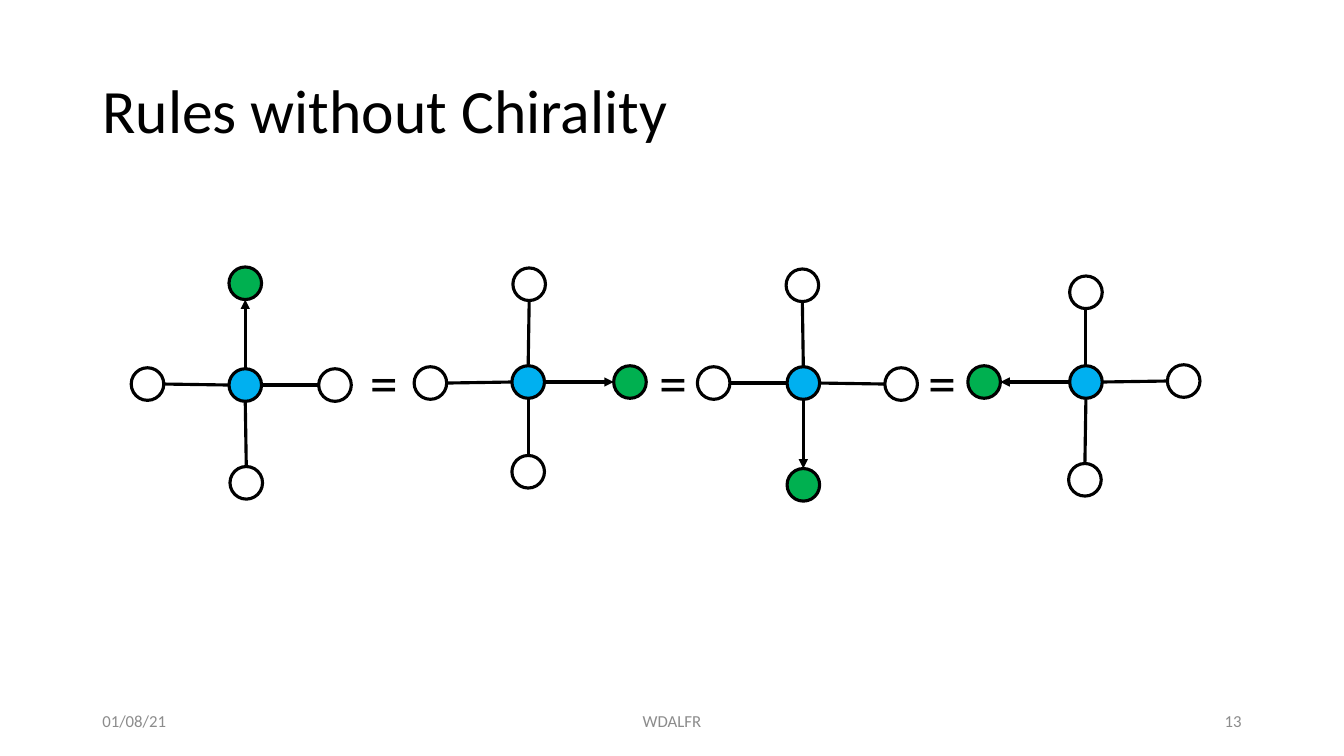
"""Build the slide of four rotated star rules joined by equals signs."""
from lxml.etree import SubElement
from pptx import Presentation
from pptx.dml.color import RGBColor
from pptx.enum.shapes import MSO_CONNECTOR, MSO_SHAPE
from pptx.enum.text import MSO_ANCHOR, MSO_AUTO_SIZE, PP_ALIGN
from pptx.oxml.ns import qn
from pptx.util import Inches, Pt

COLUMNS, ROWS = 40, 22.5
COLORS = {
    "black": "000000",
    "grey": "8C8C8C",
    "plain": "FFFFFF",
    "center": "00B0F0",
    "target": "00B050",
}
NODE_SIZE = 0.97
NEIGHBORS = [
    (0.03, -2.91, "plain"),
    (-2.91, 0.03, "plain"),
    (0, 2.67, "plain"),
    (3.03, 0, "target"),
]
STARS = [(7.3, 11.46, 3), (15.72, 11.37, 0), (23.91, 11.4, 1), (32.32, 11.37, 2)]
EQUALS_COLUMNS = [10.71, 19.32, 27.33]
FOOTERS = [
    ("01/08/21", 2.75, 9, PP_ALIGN.LEFT),
    ("WDALFR", 13.25, 13.5, PP_ALIGN.CENTER),
    ("13", 28.25, 9, PP_ALIGN.RIGHT),
]


def color(name):
    return RGBColor.from_string(COLORS[name])


def quarter_turns(x, y, turns):
    for _ in range(turns):
        x, y = -y, x
    return x, y


class SlideBuilder:
    def __init__(self, presentation):
        self.slide = presentation.slides.add_slide(presentation.slide_layouts[5])
        self.column = presentation.slide_width / COLUMNS
        self.row = presentation.slide_height / ROWS
        self.font_name = "Calibri"
        self.line_width = Pt(2.25)

    def place(self, column, row):
        return round(column * self.column), round(row * self.row)

    def fill_text(self, shape, text, size, color_name, alignment, anchor):
        frame = shape.text_frame
        frame.text = text
        frame.auto_size = MSO_AUTO_SIZE.NONE
        frame.vertical_anchor = anchor
        paragraph = frame.paragraphs[0]
        paragraph.alignment = alignment
        paragraph.font.name = self.font_name
        paragraph.font.size = Pt(size)
        paragraph.font.color.rgb = color(color_name)
        return paragraph

    def title(self, text, column, row, width, height):
        shape = self.slide.shapes.title
        shape.left, shape.top = self.place(column, row)
        shape.width, shape.height = self.place(width, height)
        paragraph = self.fill_text(
            shape, text, 44, "black", PP_ALIGN.LEFT, MSO_ANCHOR.MIDDLE)
        paragraph.line_spacing = 0.9

    def text(self, text, column, row, width, height, size, color_name,
             alignment=PP_ALIGN.LEFT, anchor=MSO_ANCHOR.TOP, wrap=True):
        box = self.slide.shapes.add_textbox(
            *self.place(column, row), *self.place(width, height))
        box.text_frame.word_wrap = wrap
        self.fill_text(box, text, size, color_name, alignment, anchor)

    def node(self, group, x, y, fill_name):
        circle = group.shapes.add_shape(
            MSO_SHAPE.OVAL,
            *self.place(x - NODE_SIZE / 2, y - NODE_SIZE / 2),
            *self.place(NODE_SIZE, NODE_SIZE))
        circle.shadow.inherit = False
        circle.fill.solid()
        circle.fill.fore_color.rgb = color(fill_name)
        circle.line.color.rgb = color("black")
        circle.line.width = self.line_width

    def edge(self, group, start, end, arrow):
        connector = group.shapes.add_connector(
            MSO_CONNECTOR.STRAIGHT, *self.place(*start), *self.place(*end))
        connector.line.color.rgb = color("black")
        connector.line.width = self.line_width
        properties = connector._element.spPr
        if arrow:
            SubElement(properties.find(qn("a:ln")), qn("a:tailEnd"), type="triangle")
        SubElement(properties, qn("a:effectLst"))

    def star(self, x, y, turns):
        group = self.slide.shapes.add_group_shape()
        self.node(group, x, y, "center")
        for base_x, base_y, fill_name in NEIGHBORS:
            offset_x, offset_y = quarter_turns(base_x, base_y, turns)
            radius_x = round(offset_x / 3) * NODE_SIZE / 2
            radius_y = round(offset_y / 3) * NODE_SIZE / 2
            node_x, node_y = x + offset_x, y + offset_y
            self.node(group, node_x, node_y, fill_name)
            self.edge(group, (x + radius_x, y + radius_y),
                      (node_x - radius_x, node_y - radius_y), fill_name == "target")


def main():
    presentation = Presentation()
    presentation.slide_width = Inches(40 / 3)
    presentation.slide_height = Inches(7.5)
    builder = SlideBuilder(presentation)
    builder.title("Rules without Chirality", 2.75, 1.2, 34.5, 4.35)
    for text, column, width, alignment in FOOTERS:
        builder.text(text, column, 20.85, width, 1.2, 12, "grey",
                     alignment, MSO_ANCHOR.MIDDLE)
    for x, y, turns in STARS:
        builder.star(x, y, turns)
    for column in EQUALS_COLUMNS:
        builder.text("=", column, 10.2, 1.44, 2.31, 40, "black", wrap=False)
    presentation.save("out.pptx")


if __name__ == "__main__":
    main()
